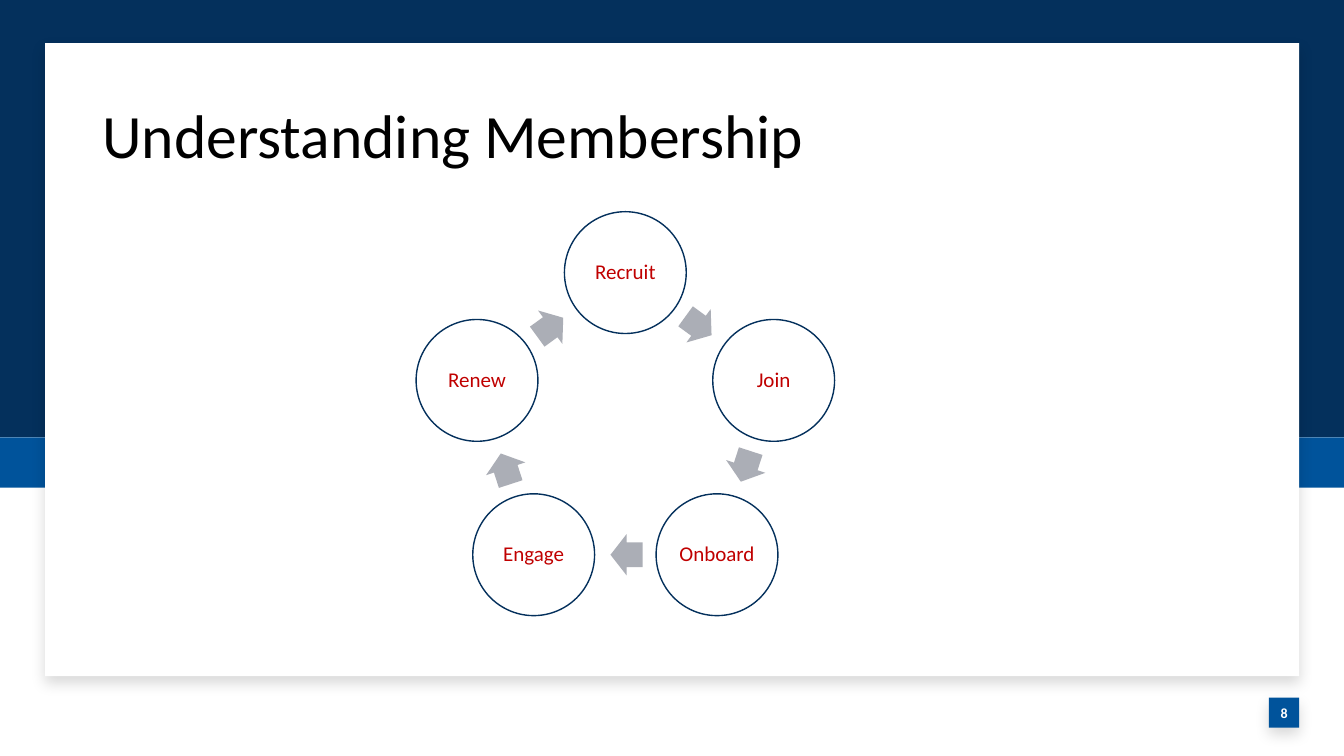
import math

from lxml import etree
from pptx import Presentation
from pptx.dml.color import RGBColor
from pptx.enum.shapes import MSO_SHAPE
from pptx.enum.text import MSO_ANCHOR, PP_ALIGN
from pptx.oxml.ns import qn
from pptx.util import Cm, Pt

RECTANGLE = MSO_SHAPE.RECTANGLE
OVAL = MSO_SHAPE.OVAL
RIGHT_ARROW = MSO_SHAPE.RIGHT_ARROW
MIDDLE = MSO_ANCHOR.MIDDLE
LEFT = PP_ALIGN.LEFT
CENTER = PP_ALIGN.CENTER

NAVY = RGBColor(0x04, 0x30, 0x5C)
BLUE = RGBColor(0x00, 0x53, 0x9B)
RED = RGBColor(0xC0, 0x00, 0x00)
GREY = RGBColor(0xAB, 0xAE, 0xB6)
WHITE = RGBColor(0xFF, 0xFF, 0xFF)
BLACK = RGBColor(0x00, 0x00, 0x00)

SLIDE_WIDTH = 33.87
SLIDE_HEIGHT = 19.05
STAGES = ["Recruit", "Join", "Onboard", "Engage", "Renew"]
CYCLE_X, CYCLE_Y, CYCLE_RADIUS = 15.76, 10.8, 3.93
CIRCLE_SIZE = 3.07
ARROW_WIDTH, ARROW_HEIGHT = 0.81, 1.04
ARROW_SETBACK = 0.03


class SlideBuilder:
    font_name = "Calibri"

    def __init__(self, slide):
        self.slide = slide

    def set_text(self, shape, text, *, size, color, bold=False, align=CENTER,
                 margins=(0, 0), line_spacing=0.9):
        frame = shape.text_frame
        frame.word_wrap = True
        frame.vertical_anchor = MIDDLE
        frame.margin_left = frame.margin_right = Cm(margins[0])
        frame.margin_top = frame.margin_bottom = Cm(margins[1])
        paragraph = frame.paragraphs[0]
        paragraph.text = text
        paragraph.alignment = align
        paragraph.line_spacing = line_spacing
        font = paragraph.runs[0].font
        font.name = self.font_name
        font.size = Pt(size)
        font.bold = bold
        font.color.rgb = color

    def shape(self, kind, left, top, width, height, fill, line=None):
        shape = self.slide.shapes.add_shape(
            kind, Cm(left), Cm(top), Cm(width), Cm(height))
        shape.shadow.inherit = False
        shape.fill.solid()
        shape.fill.fore_color.rgb = fill
        if line is None:
            shape.line.fill.background()
        else:
            shape.line.color.rgb = line
            shape.line.width = Pt(1)
        return shape

    def raised_panel(self, left, top, width, height, fill):
        panel = self.shape(RECTANGLE, left, top, width, height, fill)
        effects = panel._element.spPr.find(qn("a:effectLst"))
        shadow = etree.SubElement(
            effects, qn("a:outerShdw"), blurRad=str(Pt(10)), dist=str(Pt(5)),
            dir="5400000", algn="t", rotWithShape="0")
        color = etree.SubElement(shadow, qn("a:srgbClr"), val=str(BLACK))
        etree.SubElement(color, qn("a:alpha"), val="15000")
        return panel

    def title(self, text, left, top, width, height):
        box = self.slide.shapes.add_textbox(
            Cm(left), Cm(top), Cm(width), Cm(height))
        self.set_text(box, text, size=44, color=BLACK, align=LEFT,
                      margins=(0.25, 0.13))

    def stage(self, text, center_x, center_y):
        circle = self.shape(OVAL, center_x - CIRCLE_SIZE / 2,
                            center_y - CIRCLE_SIZE / 2,
                            CIRCLE_SIZE, CIRCLE_SIZE, WHITE, NAVY)
        self.set_text(circle, text, size=15, color=RED, margins=(0.05, 0.05))

    def arrow(self, center_x, center_y, rotation):
        arrow = self.shape(RIGHT_ARROW, center_x - ARROW_WIDTH / 2,
                           center_y - ARROW_HEIGHT / 2,
                           ARROW_WIDTH, ARROW_HEIGHT, GREY)
        arrow.adjustments[0] = 0.6
        arrow.adjustments[1] = 0.5
        arrow.rotation = rotation

    def cycle(self, stages):
        step = 360 / len(stages)
        arrow_radius = CYCLE_RADIUS * math.cos(math.radians(step / 2))
        for index, name in enumerate(stages):
            angle = math.radians(index * step)
            self.stage(name, CYCLE_X + CYCLE_RADIUS * math.sin(angle),
                       CYCLE_Y - CYCLE_RADIUS * math.cos(angle))
            rotation = (index + 0.5) * step
            turn = math.radians(rotation)
            across, down = math.cos(turn), math.sin(turn)
            self.arrow(CYCLE_X + arrow_radius * down - ARROW_SETBACK * across,
                       CYCLE_Y - arrow_radius * across - ARROW_SETBACK * down,
                       rotation)


def main():
    presentation = Presentation()
    presentation.slide_width = Cm(SLIDE_WIDTH)
    presentation.slide_height = Cm(SLIDE_HEIGHT)
    slide = presentation.slides.add_slide(presentation.slide_layouts[6])
    builder = SlideBuilder(slide)

    builder.shape(RECTANGLE, 0, 0, SLIDE_WIDTH, 11.02, NAVY)
    builder.shape(RECTANGLE, 0, 11.02, SLIDE_WIDTH, 1.27, BLUE)
    builder.raised_panel(1.14, 1.09, 31.6, 15.95, WHITE)
    number = builder.raised_panel(31.98, 17.58, 0.76, 0.76, BLUE)
    builder.set_text(number, "8", size=10, color=WHITE, bold=True,
                     line_spacing=1.0)
    builder.title("Understanding Membership", 2.33, 1.65, 29.21, 3.68)
    builder.cycle(STAGES)

    presentation.save("out.pptx")


if __name__ == "__main__":
    main()
